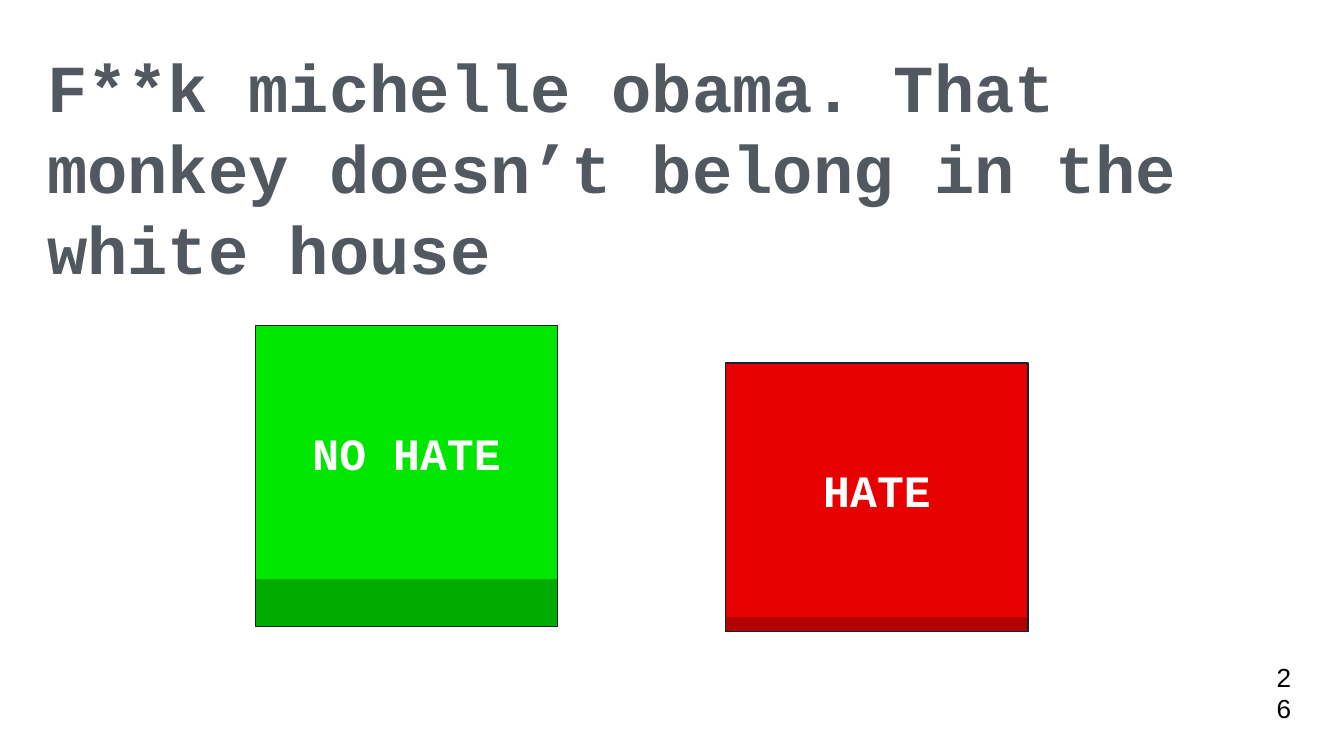
from pptx import Presentation
from pptx.dml.color import RGBColor
from pptx.enum.shapes import MSO_SHAPE as SHAPE
from pptx.enum.text import MSO_ANCHOR as ANCHOR, MSO_AUTO_SIZE as AUTO, PP_ALIGN as ALIGN
from pptx.util import Inches, Pt

COLORS = {
    "title": "525860", "outline": "18222D", "number": "000000", "label": "FFFFFF",
    "green": "00E600", "dark_green": "00AC00", "red": "E60000", "dark_red": "B30000",
}
MONO = "Courier New"
BUTTON_W, BUTTON_H = 2.25, 1.89


def color(name):
    return RGBColor.from_string(COLORS[name])


def set_insets(tf, inset):
    tf.margin_left = tf.margin_right = tf.margin_top = tf.margin_bottom = Inches(inset)


def set_font(p, name, size, color_name, bold=False):
    p.font.name, p.font.size, p.font.bold = name, Pt(size), bold
    p.font.color.rgb = color(color_name)


def add_statement(slide, text):
    sp = slide.shapes.title
    sp.left, sp.top, sp.width, sp.height = map(Inches, (0.29, 0.28, 9.1, 0.88))
    tf = sp.text_frame
    tf.text = text
    tf.word_wrap, tf.auto_size, tf.vertical_anchor = True, AUTO.NONE, ANCHOR.TOP
    set_insets(tf, 0.06)
    p = tf.paragraphs[0]
    p.alignment, p.line_spacing, p.space_after = ALIGN.LEFT, 1.0, Pt(10)
    set_font(p, MONO, 36, "title", True)


def add_page_number(slide, text):
    sp = slide.shapes.add_textbox(*map(Inches, (9.4, 5.05, 0.25, 0.21)))
    tf = sp.text_frame
    tf.text = text
    tf.word_wrap, tf.vertical_anchor = True, ANCHOR.MIDDLE
    set_insets(tf, 0.1)
    set_font(tf.paragraphs[0], "Arial", 14, "number")


def add_block(slide, left, top, height, fill=None, outlined=False):
    sp = slide.shapes.add_shape(
        SHAPE.RECTANGLE, *map(Inches, (left, top, BUTTON_W, height)))
    sp.shadow.inherit = False
    if fill:
        sp.fill.solid()
        sp.fill.fore_color.rgb = color(fill)
    else:
        sp.fill.background()
    if outlined:
        sp.line.color.rgb = color("outline")
        sp.line.width = Pt(0.75)
    else:
        sp.line.fill.background()
    return sp


def add_button(slide, label, left, top, depth, face, side):
    add_block(slide, left, top + depth, BUTTON_H, side, outlined=True)
    tf = add_block(slide, left, top, BUTTON_H, face).text_frame
    tf.text = label
    tf.word_wrap, tf.vertical_anchor = True, ANCHOR.MIDDLE
    set_insets(tf, 0.1)
    p = tf.paragraphs[0]
    p.alignment = ALIGN.CENTER
    set_font(p, MONO, 24, "label", True)
    add_block(slide, left, top, BUTTON_H + depth, outlined=True)


def main():
    prs = Presentation()
    prs.slide_width = Inches(10)
    prs.slide_height = prs.slide_width * 9 // 16
    slide = prs.slides.add_slide(prs.slide_layouts[5])
    add_statement(
        slide, "F**k michelle obama. That monkey doesn’t belong in the white house")
    add_button(slide, "NO HATE", 1.9, 2.42, 0.35, "green", "dark_green")
    add_button(slide, "HATE", 5.4, 2.7, 0.11, "red", "dark_red")
    add_page_number(slide, "26")
    prs.save("out.pptx")


if __name__ == "__main__":
    main()
